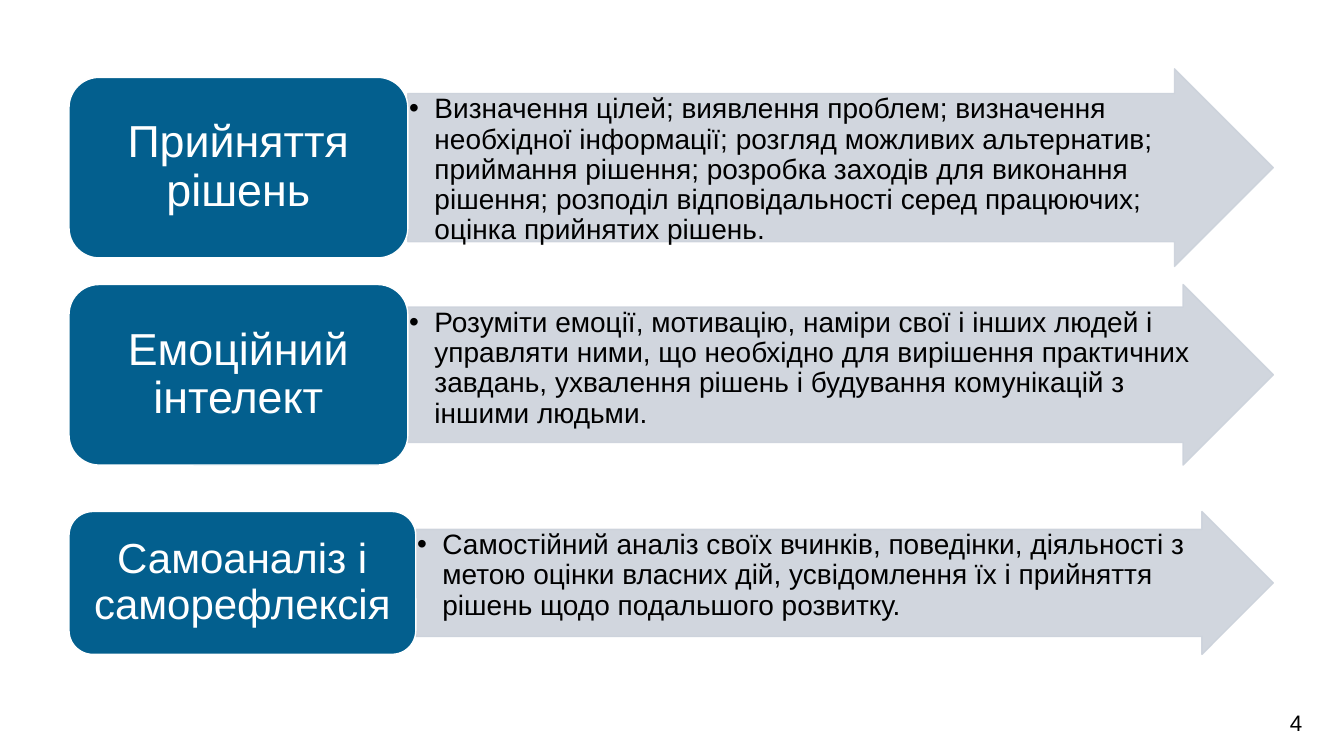
from lxml import etree
from pptx import Presentation
from pptx.dml.color import RGBColor
from pptx.enum.shapes import MSO_SHAPE
from pptx.enum.text import MSO_ANCHOR, PP_ALIGN
from pptx.oxml.ns import qn
from pptx.util import Cm, Pt

ROUNDED = MSO_SHAPE.ROUNDED_RECTANGLE
ARROW = MSO_SHAPE.RIGHT_ARROW
TOP, MIDDLE = MSO_ANCHOR.TOP, MSO_ANCHOR.MIDDLE
LEFT, CENTER = PP_ALIGN.LEFT, PP_ALIGN.CENTER

COLORS = {"blue": "035F8E", "grey": "CCD2DB", "white": "FFFFFF", "black": "000000"}
FONT = "Arial"
BOX_LEFT = 1.74
ARROW_RIGHT = 32.09
BULLET_INDENT = 0.64

SKILLS = [
    {
        "title": "Прийняття рішень", "title_size": 32,
        "top": 1.95, "width": 8.54, "height": 4.55, "arrow_height": 4.98,
        "detail": "Визначення цілей; виявлення проблем; визначення необхідної інформації; "
                  "розгляд можливих альтернатив; приймання рішення; розробка заходів для "
                  "виконання рішення; розподіл відповідальності серед працюючих; оцінка "
                  "прийнятих рішень.",
    },
    {
        "title": "Емоційний інтелект", "title_size": 32,
        "top": 7.17, "width": 8.54, "height": 4.55, "arrow_height": 4.55,
        "detail": "Розуміти емоції, мотивацію, наміри свої і інших людей і управляти ними, "
                  "що необхідно для вирішення практичних завдань, ухвалення рішень і "
                  "будування комунікацій з іншими людьми.",
    },
    {
        "title": "Самоаналіз і саморефлексія", "title_size": 30,
        "top": 12.89, "width": 8.74, "height": 3.6, "arrow_height": 3.6,
        "detail": "Самостійний аналіз своїх вчинків, поведінки, діяльності з метою оцінки "
                  "власних дій, усвідомлення їх і прийняття рішень щодо подальшого розвитку.",
    },
]


def add_block(slide, kind, left, top, width, height, fill, line):
    shape = slide.shapes.add_shape(kind, Cm(left), Cm(top), Cm(width), Cm(height))
    shape.shadow.inherit = False
    shape.fill.solid()
    shape.fill.fore_color.rgb = RGBColor.from_string(COLORS[fill])
    shape.line.color.rgb = RGBColor.from_string(COLORS[line])
    shape.line.width = Pt(1)
    return shape


def set_opacity(shape, percent):
    for color in shape._element.spPr.iter(qn("a:srgbClr")):
        etree.SubElement(color, qn("a:alpha"), val=str(percent * 1000))


def add_bullet(paragraph):
    properties = paragraph._p.get_or_add_pPr()
    properties.set("marL", str(Cm(BULLET_INDENT)))
    properties.set("indent", str(-Cm(BULLET_INDENT)))
    etree.SubElement(properties, qn("a:buFont"), typeface=FONT)
    etree.SubElement(properties, qn("a:buChar"), char="•")


def write(shape, text, size, color, align, anchor, margins, bullet=False):
    frame = shape.text_frame
    frame.word_wrap = True
    frame.vertical_anchor = anchor
    frame.margin_left = frame.margin_right = Cm(margins[0])
    frame.margin_top = frame.margin_bottom = Cm(margins[1])
    frame.text = text
    paragraph = frame.paragraphs[0]
    paragraph.alignment = align
    paragraph.line_spacing = 0.9
    if bullet:
        add_bullet(paragraph)
    font = paragraph.runs[0].font
    font.name = FONT
    font.size = Pt(size)
    font.color.rgb = RGBColor.from_string(COLORS[color])


def add_skill(slide, skill):
    arrow_left = BOX_LEFT + skill["width"]
    arrow_top = skill["top"] + (skill["height"] - skill["arrow_height"]) / 2
    arrow = add_block(slide, ARROW, arrow_left, arrow_top, ARROW_RIGHT - arrow_left,
                      skill["arrow_height"], "grey", "grey")
    arrow.adjustments[0] = 0.75
    set_opacity(arrow, 90)
    write(arrow, skill["detail"], 20, "black", LEFT, TOP, (0.03, 0.03), bullet=True)

    box = add_block(slide, ROUNDED, BOX_LEFT, skill["top"], skill["width"],
                    skill["height"], "blue", "white")
    write(box, skill["title"], skill["title_size"], "white", CENTER, MIDDLE, (0.32, 0.16))


def add_page_number(slide, number):
    box = slide.shapes.add_textbox(Cm(31.85), Cm(17.75), Cm(1.63), Cm(0.94))
    write(box, number, 16, "black", CENTER, TOP, (0.25, 0.13))
    box.text_frame.paragraphs[0].line_spacing = 1.0


def main():
    presentation = Presentation()
    presentation.slide_width = Cm(33.87)
    presentation.slide_height = Cm(19.05)
    slide = presentation.slides.add_slide(presentation.slide_layouts[6])
    add_page_number(slide, "4")
    for skill in SKILLS:
        add_skill(slide, skill)
    presentation.save("out.pptx")


if __name__ == "__main__":
    main()
